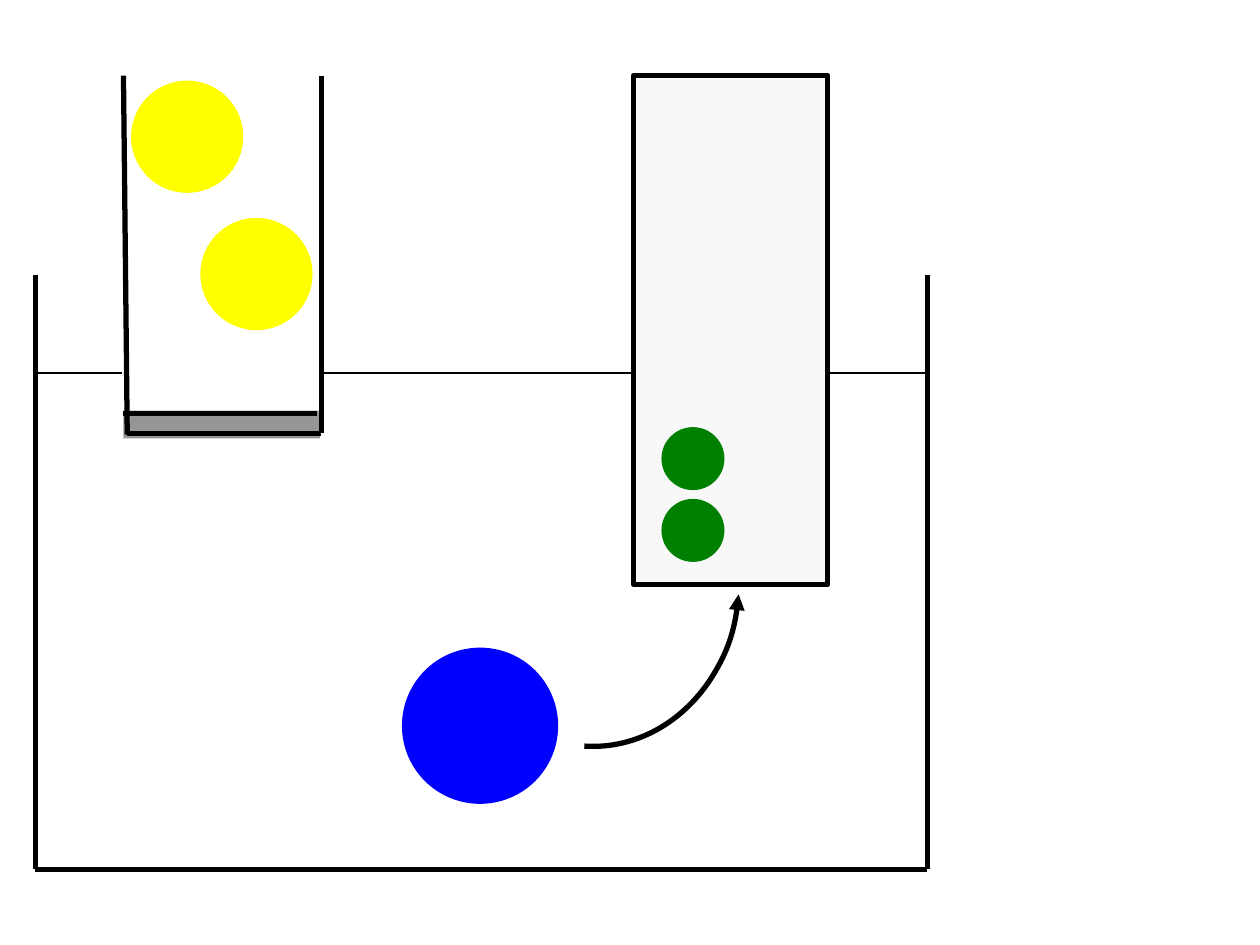
from lxml import etree
from pptx import Presentation
from pptx.dml.color import RGBColor
from pptx.enum.shapes import MSO_CONNECTOR, MSO_SHAPE
from pptx.oxml.ns import qn
from pptx.util import Inches, Pt

STRAIGHT = MSO_CONNECTOR.STRAIGHT
RECTANGLE = MSO_SHAPE.RECTANGLE
OVAL = MSO_SHAPE.OVAL
ARC = MSO_SHAPE.ARC

COLORS = {
    "outline": "000000",
    "background": "FFFFFF",
    "tube": "F8F8F8",
    "membrane": "969696",
    "small": "008000",
    "large": "0000FF",
    "medium": "FFFF00",
}
WALL = 3
TANK_LEFT, TANK_RIGHT, TANK_TOP, TANK_BOTTOM = 0.28, 7.36, 2.18, 6.9
WATER_LEVEL = 2.96


def color(name):
    return RGBColor.from_string(COLORS[name])


def add_line(shapes, start, end, width=WALL):
    line = shapes.add_connector(STRAIGHT, *map(Inches, (*start, *end)))
    line.line.color.rgb = color("outline")
    line.line.width = Pt(width)
    etree.SubElement(line._element.spPr, qn("a:effectLst"))


def add_figure(shapes, kind, box, fill=None, outline=None, width=WALL):
    """Add a preset shape; a missing fill or outline is left transparent."""
    shape = shapes.add_shape(kind, *map(Inches, box))
    shape.shadow.inherit = False
    if fill:
        shape.fill.solid()
        shape.fill.fore_color.rgb = color(fill)
    else:
        shape.fill.background()
    if outline:
        shape.line.color.rgb = color(outline)
        shape.line.width = Pt(width)
    else:
        shape.line.fill.background()
    return shape


def add_particle(shapes, left, top, diameter, fill):
    add_figure(shapes, OVAL, (left, top, diameter, diameter), fill)


def add_curved_arrow(shapes, box, rotation):
    arrow = add_figure(shapes, ARC, box, outline="outline")
    arrow.rotation = rotation
    etree.SubElement(arrow.line._get_or_add_ln(), qn("a:headEnd"), type="triangle")


def add_water(shapes):
    add_line(shapes, (TANK_LEFT, WATER_LEVEL), (TANK_RIGHT, WATER_LEVEL), 1.5)
    # Hides the water surface inside the open tube
    add_figure(shapes, RECTANGLE, (0.98, 2.88, 1.57, 0.24),
               "background", "background", 2)


def add_tubes(shapes):
    group = shapes.add_group_shape().shapes
    add_figure(group, RECTANGLE, (5.03, 0.6, 1.54, 4.04), "tube", "outline")
    add_figure(group, RECTANGLE, (0.98, 3.26, 1.56, 0.22), "membrane")
    for start, end in (
        ((2.52, 3.28), (0.98, 3.28)),
        ((2.55, 3.44), (1.01, 3.44)),
        ((2.55, 3.44), (2.55, 0.6)),
        ((1.01, 3.45), (0.98, 0.6)),
    ):
        add_line(group, start, end)
    add_curved_arrow(group, (3.44, 3.5, 2.57, 2.28), 93.9)


def add_particles(shapes):
    small_group = shapes.add_group_shape().shapes
    for top in (3.39, 3.96):
        add_particle(small_group, 5.25, top, 0.5, "small")
    add_particle(shapes, 3.19, 5.14, 1.24, "large")
    for left, top in ((1.04, 0.64), (1.59, 1.73)):
        add_particle(shapes, left, top, 0.89, "medium")


def add_tank(shapes):
    for x in (TANK_LEFT, TANK_RIGHT):
        add_line(shapes, (x, TANK_TOP), (x, TANK_BOTTOM))
    add_line(shapes, (TANK_LEFT, TANK_BOTTOM), (TANK_RIGHT, TANK_BOTTOM))


def main():
    presentation = Presentation()
    presentation.slide_width = Inches(10)
    presentation.slide_height = Inches(7.5)
    slide = presentation.slides.add_slide(presentation.slide_layouts[6])
    add_water(slide.shapes)
    add_tubes(slide.shapes)
    add_particles(slide.shapes)
    add_tank(slide.shapes)
    presentation.save("out.pptx")


if __name__ == "__main__":
    main()
